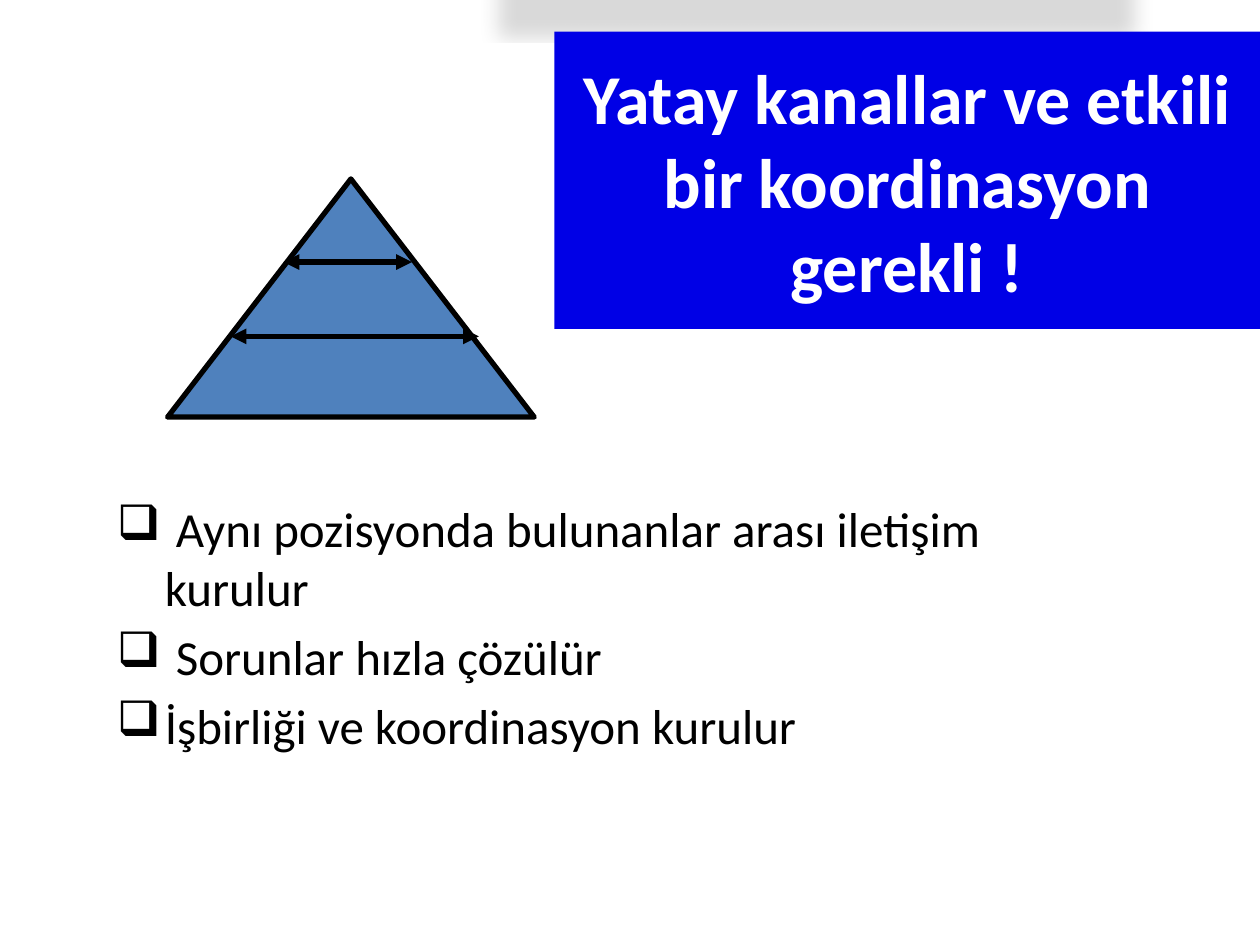
from lxml.etree import SubElement
from pptx import Presentation
from pptx.dml.color import RGBColor
from pptx.enum.shapes import MSO_CONNECTOR, MSO_SHAPE
from pptx.enum.text import MSO_ANCHOR, MSO_AUTO_SIZE, PP_ALIGN
from pptx.oxml.ns import qn
from pptx.util import Inches, Pt


def color(code):
    return RGBColor.from_string(code)


def apply(item, values):
    for name, value in values.items():
        setattr(item, name, value)


def node(parent, tag, **attrs):
    return SubElement(parent, qn(f"a:{tag}"), attrs)


class Deck:
    style = {
        "title": {"name": "Calibri", "size": Pt(40), "bold": True},
        "body": {"name": "Calibri", "size": Pt(28), "bold": False},
        "ink": "000000",
        "paper": "FFFFFF",
        "banner": "0000E6",
        "fill": "4F81BD",
        "line": Pt(3),
    }

    def __init__(self, slide):
        self.slide = slide

    def place(self, shape, box):
        names = ("left", "top", "width", "height")
        apply(shape, dict(zip(names, map(Inches, box))))

    def font(self, run, kind, code):
        apply(run.font, self.style[kind])
        run.font.color.rgb = color(code)

    def stroke(self, shape):
        shape.line.color.rgb = color(self.style["ink"])
        shape.line.width = self.style["line"]

    def title(self, text, box):
        shape = self.slide.shapes.title
        self.place(shape, box)
        shape.fill.solid()
        shape.fill.fore_color.rgb = color(self.style["banner"])
        frame = shape.text_frame
        apply(frame, {"word_wrap": True, "auto_size": MSO_AUTO_SIZE.NONE,
                      "vertical_anchor": MSO_ANCHOR.MIDDLE})
        para = frame.paragraphs[0]
        para.alignment = PP_ALIGN.CENTER
        run = para.add_run()
        run.text = text
        self.font(run, "title", self.style["paper"])
        self.shadow(shape)

    def shadow(self, shape):
        effects = node(shape.element.spPr, "effectLst")
        outer = node(effects, "outerShdw", blurRad=str(Pt(12)),
                     dist=str(Pt(25)), dir="5400000", sx="90000",
                     sy="-19000", rotWithShape="0")
        tint = node(outer, "srgbClr", val=self.style["ink"])
        node(tint, "alpha", val="15000")

    def shape(self, kind, box):
        shape = self.slide.shapes.add_shape(kind, *map(Inches, box))
        shape.shadow.inherit = False
        shape.fill.solid()
        shape.fill.fore_color.rgb = color(self.style["fill"])
        self.stroke(shape)

    def arrow(self, start, end, level):
        ends = map(Inches, (start, level, end, level))
        link = self.slide.shapes.add_connector(MSO_CONNECTOR.STRAIGHT, *ends)
        self.stroke(link)
        line = link.line._get_or_add_ln()
        for tag in ("headEnd", "tailEnd"):
            node(line, tag, type="triangle")
        node(link.element.spPr, "effectLst")

    def bullets(self, items, box, inset):
        frame = self.slide.shapes.add_textbox(*map(Inches, box)).text_frame
        apply(frame, {"word_wrap": True, "auto_size": MSO_AUTO_SIZE.NONE,
                      "margin_top": Inches(inset)})
        for rank, text in enumerate(items):
            para = frame.add_paragraph() if rank else frame.paragraphs[0]
            para.space_before = Pt(5.6 if rank else 0)
            props = para._p.get_or_add_pPr()
            props.set("marL", str(Inches(0.38)))
            props.set("indent", str(Inches(-0.38)))
            node(props, "buChar", char="❑")
            run = para.add_run()
            run.text = text
            self.font(run, "body", self.style["ink"])


def main():
    show = Presentation()
    show.slide_width, show.slide_height = Inches(10), Inches(7.5)
    deck = Deck(show.slides.add_slide(show.slide_layouts[5]))
    deck.title("Yatay kanallar ve etkili bir koordinasyon gerekli !",
               (4.4, 0.25, 5.6, 2.36))
    deck.bullets((" Aynı pozisyonda bulunanlar arası iletişim kurulur",
                  " Sorunlar hızla çözülür",
                  "İşbirliği ve koordinasyon kurulur"),
                 (0.83, 2.96, 7.8, 3.95), 1)
    deck.shape(MSO_SHAPE.ISOSCELES_TRIANGLE, (1.33, 1.42, 2.91, 1.89))
    for start, end, level in ((2.25, 3.27, 2.08), (1.83, 3.8, 2.67)):
        deck.arrow(start, end, level)
    show.save("out.pptx")


if __name__ == "__main__":
    main()
